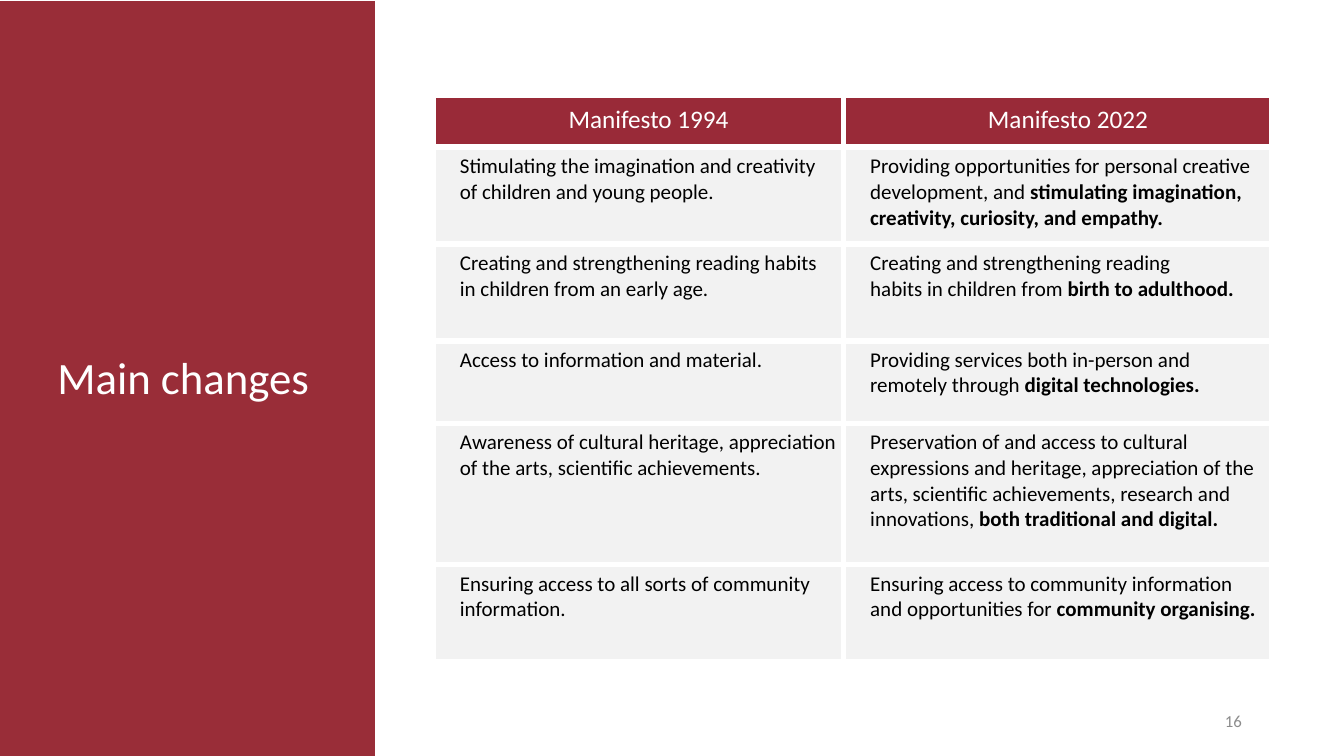
from lxml import etree
from pptx import Presentation
from pptx.dml.color import RGBColor
from pptx.enum.shapes import MSO_SHAPE
from pptx.enum.text import MSO_ANCHOR, PP_ALIGN
from pptx.oxml.ns import qn
from pptx.util import Cm, Pt

RECT = MSO_SHAPE.RECTANGLE
LEFT, CENTER, RIGHT = PP_ALIGN.LEFT, PP_ALIGN.CENTER, PP_ALIGN.RIGHT
MIDDLE, BOTTOM = MSO_ANCHOR.MIDDLE, MSO_ANCHOR.BOTTOM

TITLE = "Main changes"
PAGE = "16"
HEADERS = ["Manifesto 1994", "Manifesto 2022"]
CHANGES = [
    ("Stimulating the imagination and creativity of children and young people.",
     "Providing opportunities for personal creative development, and ",
     "stimulating imagination,\ncreativity, curiosity, and empathy."),
    ("Creating and strengthening reading habits in children from an early age.",
     "Creating and strengthening reading\nhabits in children from ",
     "birth to adulthood."),
    ("Access to information and material.",
     "Providing services both in-person and remotely through ",
     "digital technologies."),
    ("Awareness of cultural heritage, appreciation of the arts, scientific achievements.",
     "Preservation of and access to cultural\nexpressions and heritage, appreciation of the arts, "
     "scientific achievements, research and innovations, ",
     "both traditional and digital."),
    ("Ensuring access to all sorts of community information.",
     "Ensuring access to community information and opportunities for ",
     "community organising."),
]
COLORS = {"panel": "992D38", "header": "992A38", "body": "F2F2F2",
          "white": "FFFFFF", "black": "000000", "page": "8C8C8C"}
FONT = "Calibri"
COL_WIDTHS = [10.34, 10.8]
ROW_HEIGHTS = [1.3, 2.44, 2.44, 2.08, 3.56, 2.44]
TABLE_LEFT, TABLE_TOP = 10.92, 2.41
INSET, HEADER_INSET, INDENT = 0.16, 0.23, 0.51
BORDER = Pt(4.5)


def rgb(name):
    return RGBColor.from_string(COLORS[name])


def style(p, size, color, align):
    p.alignment = align
    p.font.name = FONT
    p.font.size = Pt(size)
    p.font.color.rgb = rgb(color)


def add_text(p, text, bold=False):
    for i, line in enumerate(text.split("\n")):
        if i:
            p.add_line_break()
        r = p.add_run()
        r.text = line
        if bold:
            r.font.bold = True


def add_borders(cell):
    tc_pr = cell._tc.get_or_add_tcPr()
    for i, side in enumerate(("lnL", "lnR", "lnT", "lnB")):
        ln = etree.Element(qn("a:" + side), w=str(BORDER))
        fill = etree.SubElement(ln, qn("a:solidFill"))
        etree.SubElement(fill, qn("a:srgbClr"), val=COLORS["white"])
        tc_pr.insert(i, ln)


def fill_cell(cell, parts, header):
    cell.fill.solid()
    cell.fill.fore_color.rgb = rgb("header" if header else "body")
    cell.margin_left = cell.margin_right = cell.margin_bottom = Cm(INSET)
    cell.margin_top = Cm(HEADER_INSET if header else INSET)
    add_borders(cell)
    p = cell.text_frame.paragraphs[0]
    for text, bold in zip(parts, (False, True)):
        add_text(p, text, bold)
    if header:
        style(p, 18, "white", CENTER)
    else:
        style(p, 15, "black", LEFT)
        p.space_after = Pt(8)
    p.space_before = Pt(12)
    p_pr = p._p.get_or_add_pPr()
    p_pr.set("marL", str(Cm(INDENT)))
    p_pr.set("indent", "0")


def add_label(slide, box, text, size, color, align, anchor):
    tf = slide.shapes.add_textbox(*map(Cm, box)).text_frame
    tf.word_wrap = True
    tf.vertical_anchor = anchor
    p = tf.paragraphs[0]
    add_text(p, text)
    style(p, size, color, align)
    return p


def add_changes_table(slide):
    rows = [[(h,) for h in HEADERS]] + [[(old,), (new, key)] for old, new, key in CHANGES]
    table = slide.shapes.add_table(
        len(rows), len(HEADERS), Cm(TABLE_LEFT), Cm(TABLE_TOP),
        Cm(sum(COL_WIDTHS)), Cm(sum(ROW_HEIGHTS))).table
    table.horz_banding = False
    for column, width in zip(table.columns, COL_WIDTHS):
        column.width = Cm(width)
    for i, (row, height) in enumerate(zip(rows, ROW_HEIGHTS)):
        table.rows[i].height = Cm(height)
        for j, parts in enumerate(row):
            fill_cell(table.cell(i, j), parts, i == 0)


def main():
    prs = Presentation()
    prs.slide_width, prs.slide_height = Cm(33.87), Cm(19.05)
    slide = prs.slides.add_slide(prs.slide_layouts[6])
    add_changes_table(slide)
    panel = slide.shapes.add_shape(RECT, Cm(-0.25), Cm(0.03), Cm(9.7), Cm(19.05))
    panel.shadow.inherit = False
    panel.fill.solid()
    panel.fill.fore_color.rgb = rgb("panel")
    panel.line.fill.background()
    add_label(slide, (23.93, 17.65, 7.62, 1.02), PAGE, 12, "page", RIGHT, MIDDLE)
    title = add_label(slide, (0.2, 7.92, 8.84, 2.39), TITLE, 32, "white", CENTER, BOTTOM)
    title.line_spacing = 0.9
    prs.save("out.pptx")


if __name__ == "__main__":
    main()
